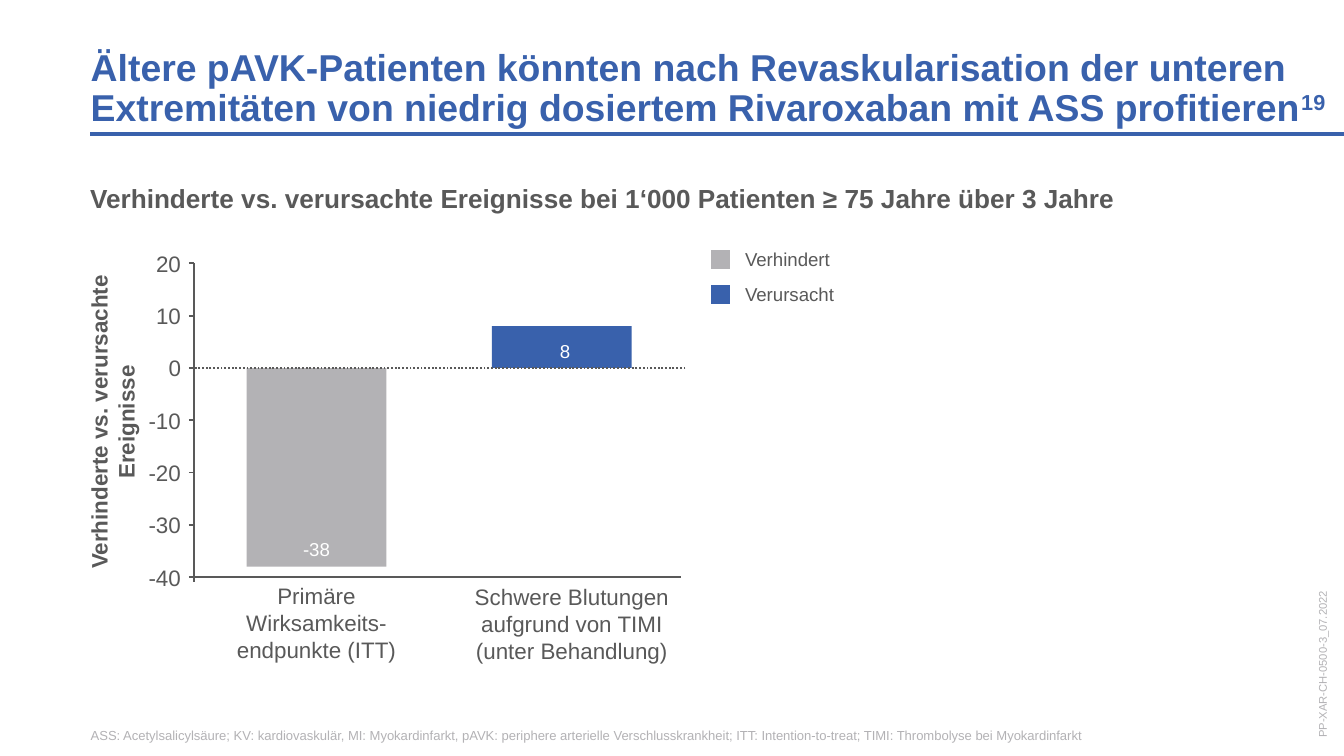
from pptx import Presentation, util as u
from pptx.dml.color import RGBColor
from pptx.enum import dml, shapes, text
from pptx.oxml.ns import qn
from lxml import etree

COLORS = {"blue": "3961AC", "grey": "B3B2B5", "ink": "595959", "white": "FFFFFF"}
LEFT, CENTER, RIGHT = text.PP_ALIGN.LEFT, text.PP_ALIGN.CENTER, text.PP_ALIGN.RIGHT
TOP, MIDDLE, BOTTOM = text.MSO_ANCHOR.TOP, text.MSO_ANCHOR.MIDDLE, text.MSO_ANCHOR.BOTTOM

deck = Presentation()
deck.slide_width = u.Inches(10)
deck.slide_height = deck.slide_width * 9 // 16
page = deck.slides.add_slide(deck.slide_layouts[6])
CELL = deck.slide_width // 100  # square grid: 100 columns, 56.25 rows


def add_text(area, runs, size, color, align=LEFT, anchor=MIDDLE, bold=False,
             inset=(0, 0), wrap=True):
    """Write (wording, baseline percent) runs into one paragraph; area is in grid cells."""
    box = page.shapes.add_textbox(*(round(n * CELL) for n in area))
    frame = box.text_frame
    frame.word_wrap = wrap
    frame.vertical_anchor = anchor
    frame.margin_left = frame.margin_right = round(inset[0] * CELL)
    frame.margin_top = frame.margin_bottom = round(inset[1] * CELL)
    para = frame.paragraphs[0]
    para.alignment = align
    for wording, baseline in runs:
        span = para.add_run()
        span.text = wording
        span.font.name = "Arial"
        span.font.size = u.Pt(size)
        span.font.bold = bold
        span.font.color.rgb = RGBColor.from_string(COLORS[color])
        if baseline:
            span.font._element.set("baseline", str(baseline * 1000))
    return box


def add_line(x1, y1, x2, y2, color="ink", width=1):
    line = page.shapes.add_connector(
        shapes.MSO_CONNECTOR.STRAIGHT, *(round(n * CELL) for n in (x1, y1, x2, y2)))
    line.line.color.rgb = RGBColor.from_string(COLORS[color])
    line.line.width = u.Pt(width)
    etree.SubElement(line._element.spPr, qn("a:effectLst"))
    return line


# Headings and footnotes
add_line(6.7, 10, 100, 10, "blue", 2.25)
title = add_text(
    (6.75, 3.55, 92.2, 6.1),
    [("Ältere pAVK-Patienten könnten nach Revaskularisation der unteren "
      "Extremitäten von niedrig dosiertem Rivaroxaban mit ASS profitieren", 0),
     ("19", 30)], 20, "blue", anchor=BOTTOM, bold=True)
title.text_frame.paragraphs[0].line_spacing = 0.9
add_text((6.7, 13.55, 86.2, 2.4),
         [("Verhinderte vs. verursachte Ereignisse bei 1‘000 Patienten "
           "≥ 75 Jahre über 3 Jahre", 0)], 14, "ink", anchor=TOP, bold=True)
add_text((6.75, 54.1, 90.5, 1.2),
         [("ASS: Acetylsalicylsäure; KV: kardiovaskulär, MI: Myokardinfarkt, "
           "pAVK: periphere arterielle Verschlusskrankheit; ITT: Intention-to-treat; "
           "TIMI: Thrombolyse bei Myokardinfarkt", 0)], 7, "grey", anchor=BOTTOM)
code = add_text((91.4, 46.35, 14, 3.1), [("PP-XAR-CH-0500-3_07.2022", 0)], 6, "grey",
                wrap=False)
code.rotation = 270

# Axes
AXIS_X, AXIS_TOP, STEP = 14.45, 19.6, 3.89
TICKS = range(20, -41, -10)
ZERO = AXIS_TOP + 2 * STEP
FLOOR = AXIS_TOP + 6 * STEP
axis_title = add_text((-3.4, 29.75, 23.5, 3.3),
                      [("Verhinderte vs. verursachte Ereignisse", 0)], 12, "ink",
                      CENTER, bold=True)
axis_title.rotation = 270
add_line(AXIS_X, AXIS_TOP, AXIS_X, FLOOR + 0.4)
add_line(AXIS_X, FLOOR, 50.7, FLOOR)
for row, value in enumerate(TICKS):
    y = AXIS_TOP + row * STEP
    add_line(AXIS_X - 0.4, y, AXIS_X, y)
    add_text((8.45, y - 1.55, 6, 3.1), [(str(value), 0)], 12, "ink", RIGHT,
             inset=(1, 0.5))

# Bars: left, value, colour, category, category area, value label area
BAR_WIDTH = 10.4
bars = [
    (18.35, -38, "grey", "Primäre Wirksamkeits-endpunkte (ITT)",
     (14.65, 42.75, 17.8, 7.1), (18.35, 39.5, BAR_WIDTH, 2.7)),
    (36.6, 8, "blue", "Schwere Blutungen aufgrund von TIMI (unter Behandlung)",
     (34.05, 42.85, 17, 7.1), (36.85, 24.75, BAR_WIDTH, 2.7)),
]
# Legend keys share the rectangle loop with the bars
KEY = 1.2
legend = [("Verhindert", "grey", 18.7), ("Verursacht", "blue", 21.3)]
blocks = [(left, ZERO - max(value, 0) * STEP / 10, BAR_WIDTH, abs(value) * STEP / 10,
           color, 0) for left, value, color, *_ in bars]
blocks += [(53, y, KEY, KEY, color, 1.5) for _, color, y in legend]
for *area, color, outline in blocks:
    block = page.shapes.add_shape(shapes.MSO_SHAPE.RECTANGLE,
                                  *(round(n * CELL) for n in area))
    block.shadow.inherit = False
    block.fill.solid()
    block.fill.fore_color.rgb = RGBColor.from_string(COLORS[color])
    if outline:
        block.line.color.rgb = RGBColor.from_string(COLORS[color])
        block.line.width = u.Pt(outline)
        etree.SubElement(block.line._ln, qn("a:miter"), lim="800000")
    else:
        block.line.fill.background()

zero_line = add_line(51, ZERO, AXIS_X, ZERO)
zero_line.line.dash_style = dml.MSO_LINE.ROUND_DOT

for _, value, _, category, category_area, value_area in bars:
    add_text(category_area, [(category, 0)], 12, "ink", CENTER, inset=(1, 0.5))
    add_text(value_area, [(str(value), 0)], 10, "white", CENTER, BOTTOM, inset=(1, 0.5))
for name, _, y in legend:
    add_text((54.45, y + KEY / 2 - 1.35, 17.1, 2.7), [(name, 0)], 10, "ink",
             inset=(1, 0.5))

deck.save("out.pptx")
